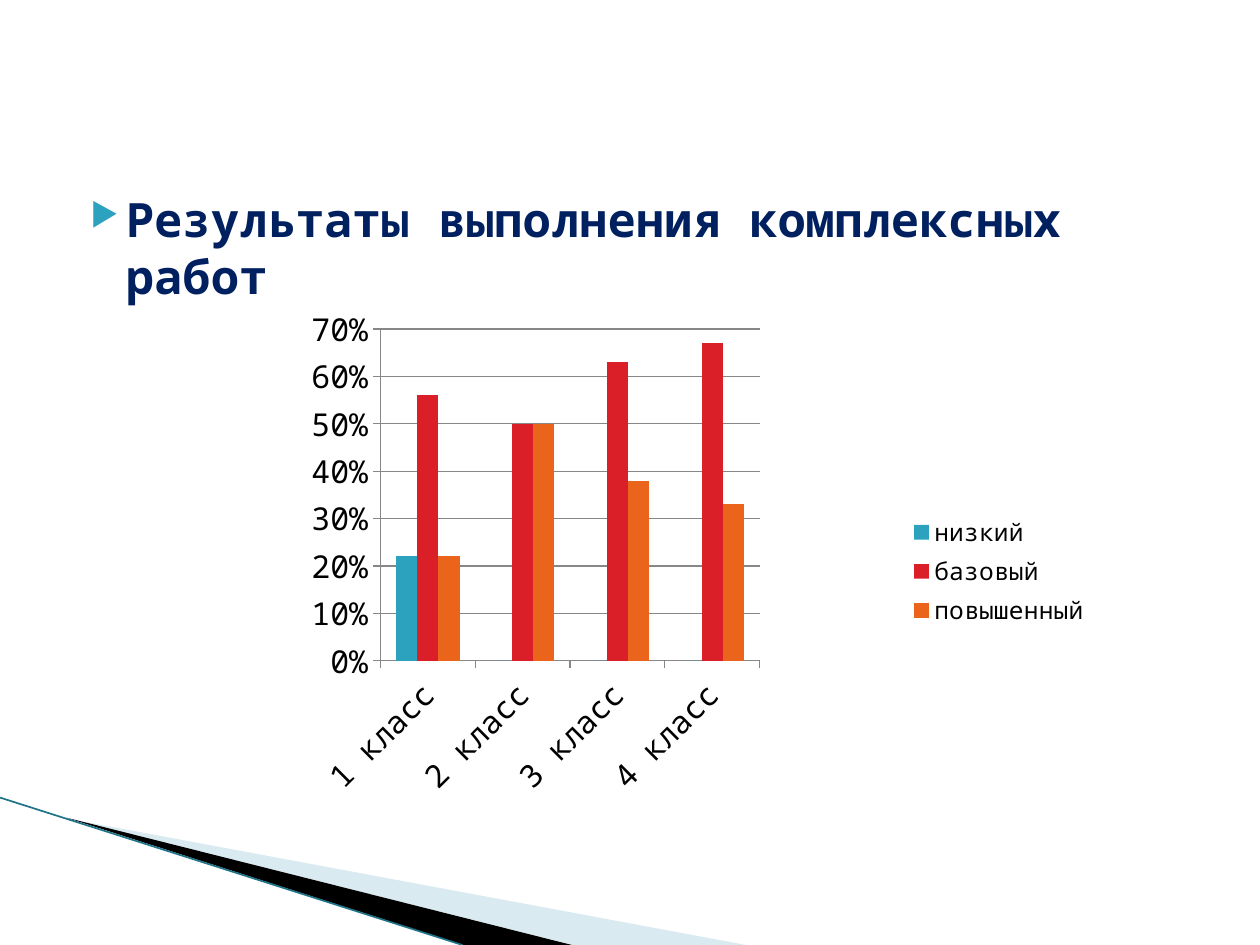
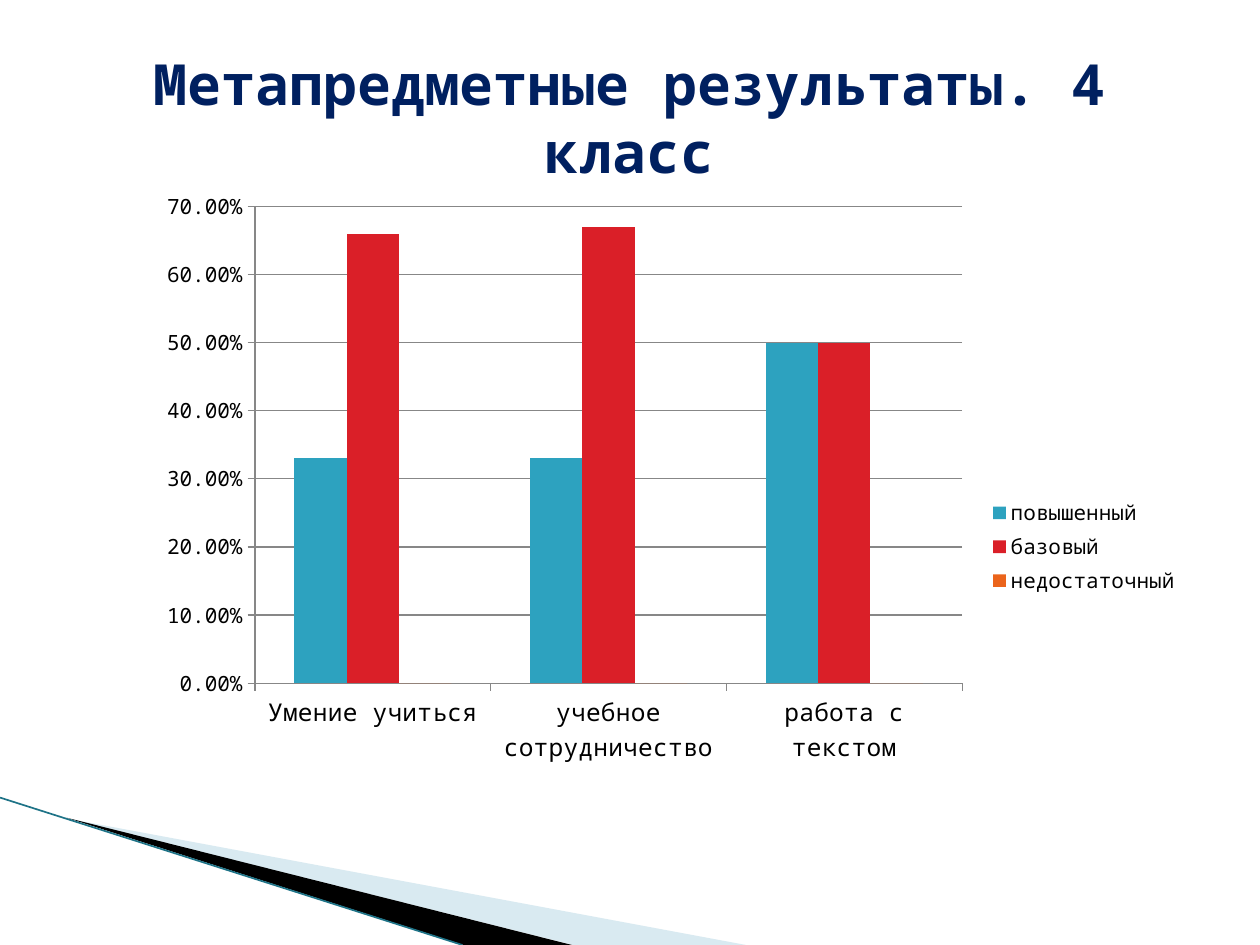
"""Two slides on school results: each has a text line and a clustered column chart."""
import pptx
import pptx.chart.data
import pptx.dml.color
import pptx.enum.chart
import pptx.enum.shapes
import pptx.enum.text
import pptx.oxml
import pptx.oxml.ns
import pptx.util

COLUMNS, ROWS = 100, 75
UNIT = pptx.util.Inches(0.1)
FONT = "Noto Sans Mono"
NAVY, TEAL, RED, ORANGE = "002060", "2DA2BF", "DA1F28", "EB641B"
BLACK, GRID_GREY, EDGE, PALE = "000000", "878787", "1E7387", "A0CBDC"

WEDGES = [
    {"points": [(5.5, 65), (59.2, ROWS), (45.5, ROWS)], "fill": PALE, "alpha": 40},
    {"points": [(5.3, 64.9), (45.4, ROWS), (36.8, ROWS)], "fill": BLACK, "alpha": 100},
]
EDGE_LINE = (0, 63.3, 36.7, ROWS)

SLIDES = [
    {
        "heading": {"text": "Результаты выполнения комплексных работ", "at": (5, 14.6, 90, 11),
                    "size": 27, "bullet": True},
        "chart": {
            "at": (17.2, 21.9, 70.3, 46.9), "plot": (0.185, 0.09, 0.428, 0.561),
            "categories": ["1 класс", "2 класс", "3 класс", "4 класс"],
            "series": [("низкий", (0.22, 0, 0, 0)),
                       ("базовый", (0.56, 0.5, 0.63, 0.67)),
                       ("повышенный", (0.22, 0.5, 0.38, 0.33))],
            "format": "0%", "sizes": {"category": 18, "value": 18, "legend": 14}, "turn": -45,
        },
    },
    {
        "heading": {"text": "Метапредметные результаты. 4 класс", "at": (5, 3, 90, 12.5),
                    "size": 32.4, "bullet": False},
        "chart": {
            "at": (10.2, 14.1, 84.4, 58.6), "plot": (0.119, 0.039, 0.665, 0.646),
            "categories": ["Умение учиться", "учебное сотрудничество", "работа с текстом"],
            "series": [("повышенный", (0.33, 0.33, 0.5)),
                       ("базовый", (0.66, 0.67, 0.5)),
                       ("недостаточный", (0, 0, 0))],
            "format": "0.00%", "sizes": {"category": 14, "value": 12, "legend": 12}, "turn": 0,
        },
    },
]


def colour(hex_text):
    return pptx.dml.color.RGBColor.from_string(hex_text)


def place(cells):
    return [int(cell * UNIT) for cell in cells]


def assign(target, values):
    for name, value in values.items():
        setattr(target, name, value)


def xml(text):
    return pptx.oxml.parse_xml(text.replace(">", " %s>" % pptx.oxml.ns.nsdecls("a", "c"), 1)
                               if not text.split(">", 1)[0].endswith("/")
                               else text.replace("/>", " %s/>" % pptx.oxml.ns.nsdecls("a", "c"), 1))


def style_font(font, size, tint=BLACK, bold=False):
    assign(font, {"name": FONT, "size": pptx.util.Pt(size), "bold": bold})
    font.color.rgb = colour(tint)


def add_swoosh(page):
    for wedge in WEDGES:
        points = [(x * 100, y * 100) for x, y in wedge["points"]]
        builder = page.shapes.build_freeform(*points[0], scale=UNIT / 100)
        builder.add_line_segments(points[1:], close=True)
        shape = builder.convert_to_shape()
        shape.shadow.inherit = False
        shape.fill.solid()
        shape.fill.fore_color.rgb = colour(wedge["fill"])
        shape.line.fill.background()
        tint = shape.fill._xPr.find(".//" + pptx.oxml.ns.qn("a:srgbClr"))
        tint.append(xml('<a:alpha val="%d"/>' % (wedge["alpha"] * 1000)))
    edge = page.shapes.add_connector(pptx.enum.shapes.MSO_CONNECTOR.STRAIGHT, *place(EDGE_LINE))
    edge.line.color.rgb = colour(EDGE)
    edge.line.width = pptx.util.Pt(0.95)
    edge._element.spPr.append(xml("<a:effectLst/>"))


def add_heading(page, heading):
    box = page.shapes.add_textbox(*place(heading["at"]))
    anchors = pptx.enum.text.MSO_ANCHOR
    assign(box.text_frame, {
        "word_wrap": True,
        "vertical_anchor": anchors.TOP if heading["bullet"] else anchors.MIDDLE})
    para = box.text_frame.paragraphs[0]
    if heading["bullet"]:
        settings = para._p.get_or_add_pPr()
        settings.set("marL", str(pptx.util.Inches(0.4)))
        settings.set("indent", str(pptx.util.Inches(-0.28)))
        for part in ('<a:buClr><a:srgbClr val="%s"/></a:buClr>' % TEAL,
                     '<a:buSzPct val="68000"/>', '<a:buChar char="▶"/>'):
            settings.append(xml(part))
    else:
        para.alignment = pptx.enum.text.PP_ALIGN.CENTER
    span = para.add_run()
    span.text = heading["text"]
    style_font(span.font, heading["size"], NAVY, True)


def add_columns(page, content):
    data = pptx.chart.data.CategoryChartData(number_format=content["format"])
    data.categories = content["categories"]
    for name, values in content["series"]:
        data.add_series(name, values)
    kinds = pptx.enum.chart
    chart = page.shapes.add_chart(kinds.XL_CHART_TYPE.COLUMN_CLUSTERED,
                                  *place(content["at"]), data).chart
    assign(chart, {"has_title": False, "has_legend": True})
    style_font(chart.font, 18)
    assign(chart.legend, {"position": kinds.XL_LEGEND_POSITION.RIGHT, "include_in_layout": False})
    sizes = content["sizes"]
    style_font(chart.legend.font, sizes["legend"])
    for axis, size in ((chart.category_axis, sizes["category"]), (chart.value_axis, sizes["value"])):
        axis.major_tick_mark = kinds.XL_TICK_MARK.OUTSIDE
        style_font(axis.tick_labels.font, size)
        axis.format.line.color.rgb = colour(GRID_GREY)
    if content["turn"]:
        body = chart.category_axis._element.find(".//" + pptx.oxml.ns.qn("a:bodyPr"))
        body.set("rot", str(content["turn"] * 60000))
    assign(chart.value_axis, {"minimum_scale": 0, "maximum_scale": 0.7, "major_unit": 0.1,
                              "has_major_gridlines": True})
    chart.value_axis.major_gridlines.format.line.color.rgb = colour(GRID_GREY)
    assign(chart.value_axis.tick_labels, {"number_format": content["format"],
                                          "number_format_is_linked": False})
    plot = chart.plots[0]
    assign(plot, {"gap_width": 150, "overlap": 0, "vary_by_categories": False})
    for series, tint in zip(plot.series, (TEAL, RED, ORANGE)):
        series.format.fill.solid()
        series.format.fill.fore_color.rgb = colour(tint)
    set_plot_area(chart, content["plot"])


def set_plot_area(chart, shares):
    area = chart._chartSpace.chart.plotArea
    for old in area.findall(pptx.oxml.ns.qn("c:layout")):
        area.remove(old)
    modes = '<c:layoutTarget val="inner"/><c:xMode val="edge"/><c:yMode val="edge"/>'
    sides = "".join('<c:%s val="%s"/>' % pair for pair in zip("xywh", shares))
    area.insert(0, xml("<c:layout><c:manualLayout>%s%s</c:manualLayout></c:layout>" % (modes, sides)))


def main():
    deck = pptx.Presentation()
    assign(deck, {"slide_width": COLUMNS * UNIT, "slide_height": ROWS * UNIT})
    for content in SLIDES:
        page = deck.slides.add_slide(deck.slide_layouts[6])
        add_swoosh(page)
        add_heading(page, content["heading"])
        add_columns(page, content["chart"])
    deck.save("out.pptx")


if __name__ == "__main__":
    main()
